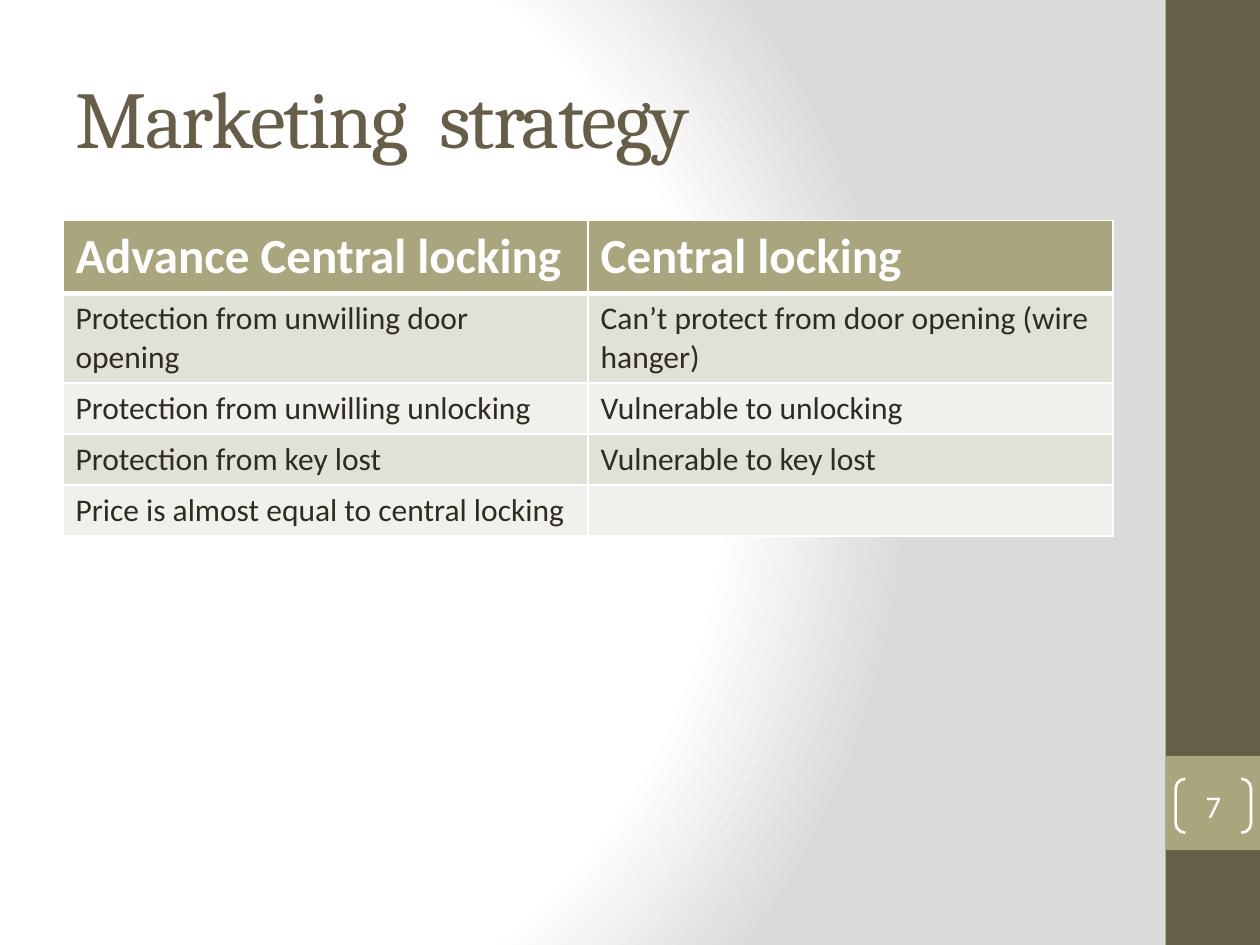
import pptx
import pptx.util
import pptx.dml.color
import pptx.enum.shapes
import pptx.enum.text
import pptx.oxml
import pptx.oxml.ns
from lxml import etree

Cm = pptx.util.Cm
Pt = pptx.util.Pt

TITLE = "Marketing  strategy"
PAGE_NUMBER = "7"
ROWS = [
    ("Advance Central locking", "Central locking"),
    ("Protection from unwilling door opening", "Can’t protect from door opening (wire hanger)"),
    ("Protection from unwilling unlocking", "Vulnerable to unlocking"),
    ("Protection from key lost", "Vulnerable to key lost"),
    ("Price is almost equal to central locking", ""),
]
COLORS = {
    "white": "FFFFFF",
    "shade": "DADADA",
    "brown": "675E47",
    "olive": "A9A57C",
    "text": "2F2B20",
    "band_dark": "E2E1D7",
    "band_light": "F1F0EC",
}
GRADIENT_STOPS = [(0, "white"), (75, "white"), (100, "shade")]
GRADIENT_CENTER = {"l": 20, "t": 50, "r": 100, "b": 50}

SLIDE_WIDTH, SLIDE_HEIGHT = Cm(25.4), Cm(19.05)
SIDEBAR_WIDTH = Cm(1.9)
SIDEBAR_LEFT = SLIDE_WIDTH - SIDEBAR_WIDTH
CONTENT_LEFT, CONTENT_WIDTH = Cm(1.27), Cm(21.17)
ROW_HEIGHT = Cm(1.03)


def color(name):
    return pptx.dml.color.RGBColor.from_string(COLORS[name])


def add_run(paragraph, text, font_name, size, color_name, bold=False):
    run = paragraph.add_run()
    run.text = text
    run.font.name = font_name
    run.font.size = Pt(size)
    run.font.bold = bold
    run.font.color.rgb = color(color_name)
    return run


def set_background(slide):
    slide.background.fill.gradient()
    gradient = slide.background._cSld.find(".//" + pptx.oxml.ns.qn("a:gradFill"))
    stops = "".join(
        f'<a:gs pos="{position * 1000}"><a:srgbClr val="{COLORS[name]}"/></a:gs>'
        for position, name in GRADIENT_STOPS
    )
    center = " ".join(f'{side}="{value * 1000}"' for side, value in GRADIENT_CENTER.items())
    gradient.getparent().replace(gradient, pptx.oxml.parse_xml(
        f'<a:gradFill {pptx.oxml.ns.nsdecls("a")} rotWithShape="1"><a:gsLst>{stops}</a:gsLst>'
        f'<a:path path="circle"><a:fillToRect {center}/></a:path></a:gradFill>'
    ))


def add_block(slide, top, height, color_name):
    block = slide.shapes.add_shape(
        pptx.enum.shapes.MSO_SHAPE.RECTANGLE, SIDEBAR_LEFT, top, SIDEBAR_WIDTH, height)
    block.shadow.inherit = False
    block.fill.solid()
    block.fill.fore_color.rgb = color(color_name)
    block.line.fill.background()


def fill_title(slide):
    title = slide.shapes.title
    title.left, title.top = CONTENT_LEFT, Cm(0.76)
    title.width, title.height = CONTENT_WIDTH, Cm(3.18)
    title.text_frame.vertical_anchor = pptx.enum.text.MSO_ANCHOR.MIDDLE
    paragraph = title.text_frame.paragraphs[0]
    paragraph.alignment = pptx.enum.text.PP_ALIGN.LEFT
    run = add_run(paragraph, TITLE, "Cambria", 46, "brown")
    run.font._element.set("spc", "-100")


def set_borders(cell, widths):
    properties = cell._tc.get_or_add_tcPr()
    for side, width in widths.items():
        line = etree.SubElement(properties, pptx.oxml.ns.qn(f"a:ln{side}"), w=str(Pt(width)))
        fill = etree.SubElement(line, pptx.oxml.ns.qn("a:solidFill"))
        etree.SubElement(fill, pptx.oxml.ns.qn("a:srgbClr"), val=COLORS["white"])


def add_comparison(slide):
    table = slide.shapes.add_table(
        len(ROWS), len(ROWS[0]), CONTENT_LEFT, Cm(4.45),
        CONTENT_WIDTH, ROW_HEIGHT * len(ROWS)).table
    for row_index, texts in enumerate(ROWS):
        header = row_index == 0
        band = "band_dark" if row_index % 2 else "band_light"
        for column_index, text in enumerate(texts):
            cell = table.cell(row_index, column_index)
            set_borders(cell, {"L": 1, "R": 1, "T": 3 if row_index == 1 else 1,
                               "B": 3 if header else 1})
            cell.fill.solid()
            cell.fill.fore_color.rgb = color("olive" if header else band)
            if text:
                add_run(cell.text_frame.paragraphs[0], text, "Calibri",
                        28 if header else 18, "white" if header else "text", header)


def add_page_number(slide):
    bracket = slide.shapes.add_shape(
        pptx.enum.shapes.MSO_SHAPE.DOUBLE_BRACKET, Cm(23.7), Cm(15.7), Cm(1.52), Cm(1.09))
    bracket.adjustments[0] = 0.18
    bracket.shadow.inherit = False
    bracket.fill.background()
    bracket.line.color.rgb = color("white")
    bracket.line.width = Pt(1.5)
    frame = bracket.text_frame
    frame.margin_left = frame.margin_right = frame.margin_top = frame.margin_bottom = 0
    frame.vertical_anchor = pptx.enum.text.MSO_ANCHOR.MIDDLE
    paragraph = frame.paragraphs[0]
    paragraph.alignment = pptx.enum.text.PP_ALIGN.CENTER
    add_run(paragraph, PAGE_NUMBER, "Calibri", 18, "white")


def main():
    presentation = pptx.Presentation()
    presentation.slide_width, presentation.slide_height = SLIDE_WIDTH, SLIDE_HEIGHT
    slide = presentation.slides.add_slide(presentation.slide_layouts[5])
    set_background(slide)
    add_block(slide, 0, SLIDE_HEIGHT, "brown")
    add_block(slide, Cm(15.24), SIDEBAR_WIDTH, "olive")
    fill_title(slide)
    add_comparison(slide)
    add_page_number(slide)
    presentation.save("out.pptx")


if __name__ == "__main__":
    main()
